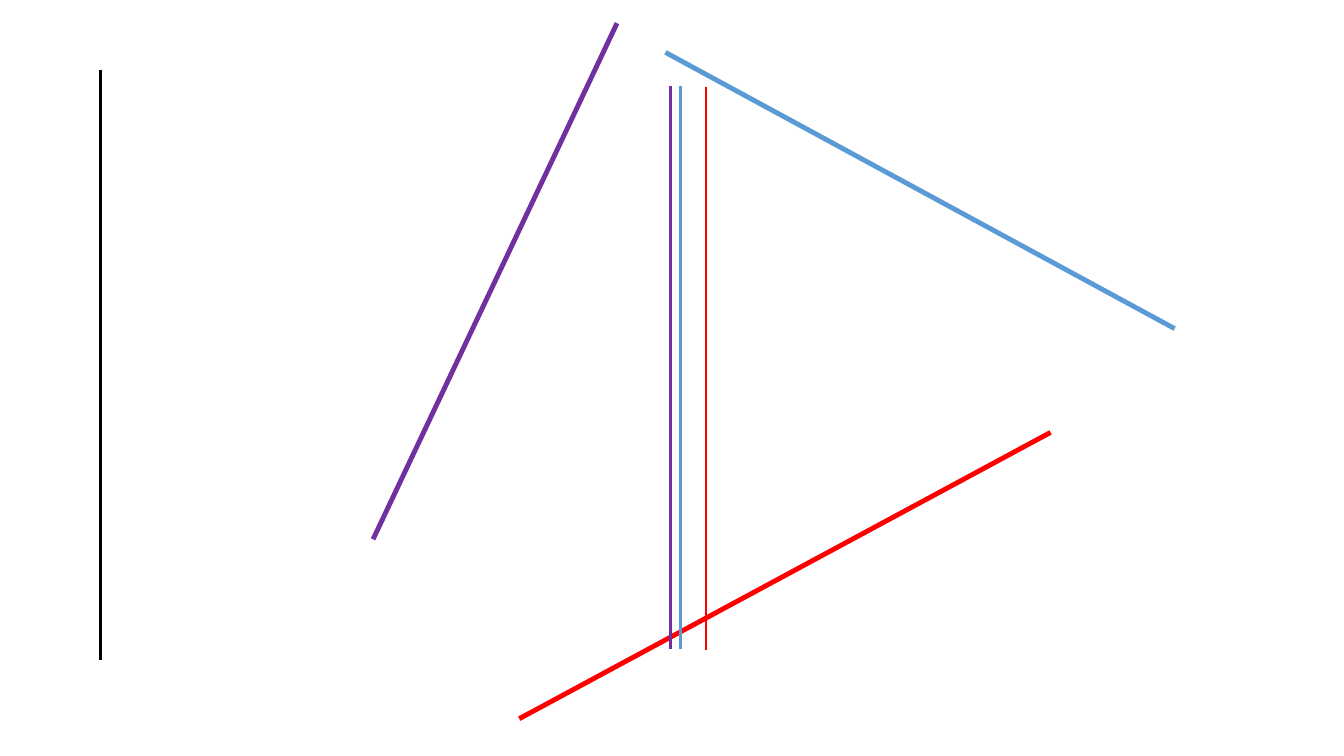
from lxml.etree import SubElement
from pptx import Presentation
from pptx.dml.color import RGBColor
from pptx.enum.shapes import MSO_CONNECTOR as Connector
from pptx.oxml.ns import qn
from pptx.util import Emu, Pt

EMU_PER_PX = 9144  # 100 px to the inch
SLIDE_WIDTH, SLIDE_HEIGHT = 1333, 750

BLUE = RGBColor(0x5B, 0x9B, 0xD5)
RED = RGBColor(0xFF, 0x00, 0x00)
PURPLE = RGBColor(0x70, 0x30, 0xA0)
BLACK = RGBColor(0x00, 0x00, 0x00)

SLANTED_WIDTH = 3.5
AXIS_WIDTH = 2
UPRIGHT_WIDTH = 1.75
UPRIGHT_LENGTH = 559

SLANTED_LINES = [
    ((660, 52), (1165, 326), BLUE),
    ((515, 713), (1042, 429), RED),
    ((612, 23), (370, 535), PURPLE),
]
UPRIGHT_LINES = [
    (675, 85, BLUE),
    (665, 85, PURPLE),
    (700, 86, RED),
]


def px(length):
    return Emu(length * EMU_PER_PX)


def add_line(slide, start, end, color, width):
    points = [px(value) for value in (*start, *end)]
    connector = slide.shapes.add_connector(Connector.STRAIGHT, *points)
    connector.line.color.rgb = color
    connector.line.width = Pt(width)
    SubElement(connector._element.spPr, qn("a:effectLst"))


def add_upright(slide, x, top, length, color, width):
    add_line(slide, (x, top), (x, top + length), color, width)


def main():
    presentation = Presentation()
    presentation.slide_width = px(SLIDE_WIDTH)
    presentation.slide_height = px(SLIDE_HEIGHT)
    slide = presentation.slides.add_slide(presentation.slide_layouts[6])

    for start, end, color in SLANTED_LINES:
        add_line(slide, start, end, color, SLANTED_WIDTH)
    add_upright(slide, 100, 69, 586, BLACK, AXIS_WIDTH)
    for x, top, color in UPRIGHT_LINES:
        add_upright(slide, x, top, UPRIGHT_LENGTH, color, UPRIGHT_WIDTH)

    presentation.save("out.pptx")


if __name__ == "__main__":
    main()
